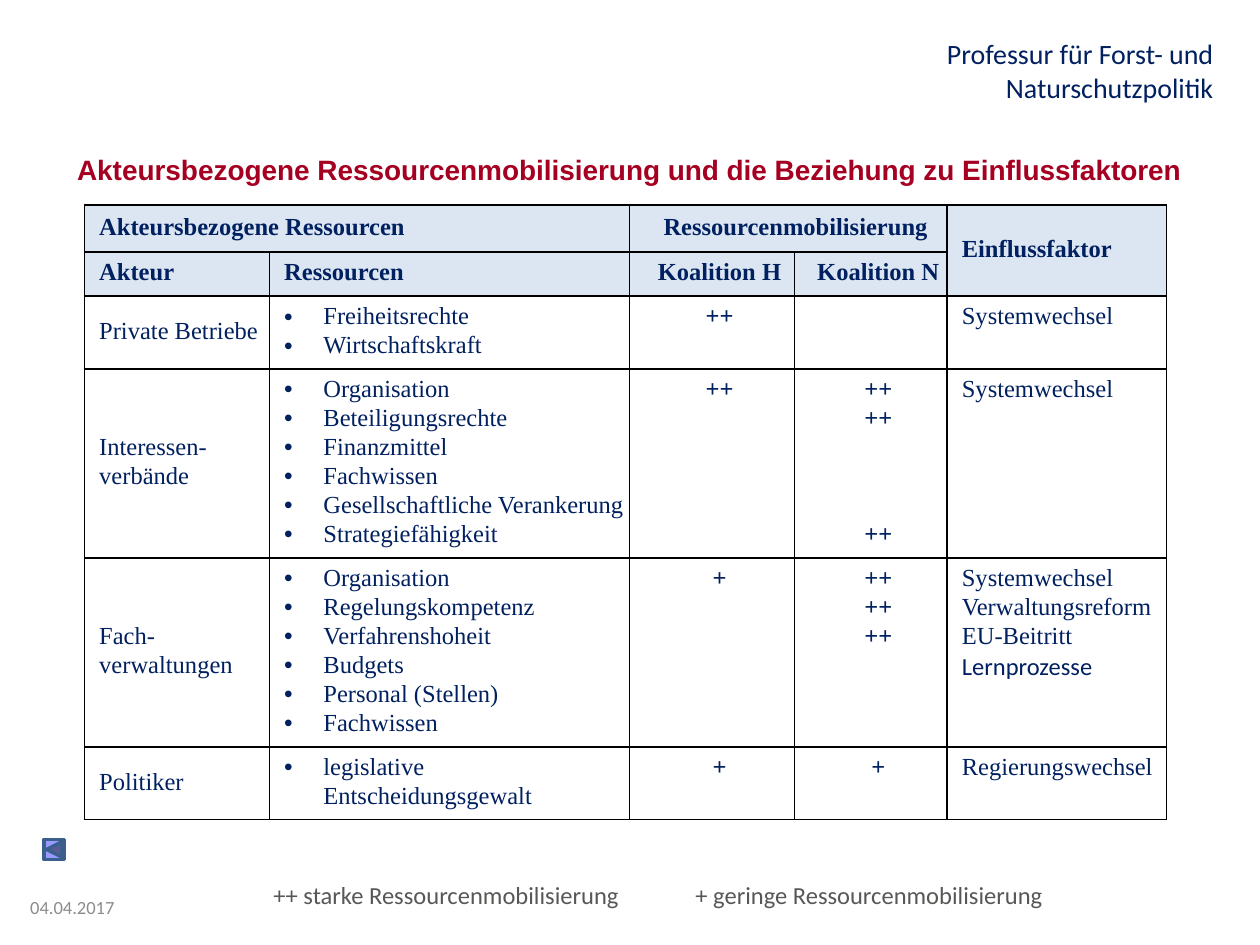
from dataclasses import dataclass

from lxml import etree
from pptx import Presentation
from pptx.dml.color import RGBColor
from pptx.enum.shapes import MSO_SHAPE
from pptx.enum.text import MSO_ANCHOR, PP_ALIGN
from pptx.oxml.ns import qn
from pptx.util import Cm, Pt

LEFT, MID, RIGHT = PP_ALIGN.LEFT, PP_ALIGN.CENTER, PP_ALIGN.RIGHT
TOP, CENTRE = MSO_ANCHOR.TOP, MSO_ANCHOR.MIDDLE
BACK = MSO_SHAPE.ACTION_BUTTON_BACK_OR_PREVIOUS

HEX = {"navy": "002060", "red": "A50021", "grey": "575756", "date": "8C8C8C",
       "head": "DCE6F2", "rule": "000000", "button": "9999FF", "edge": "3A5F8C"}
SERIF, SANS, BOLD_SANS = "Times New Roman", "Calibri", "Arial"
SIZE, LINE = 14, 16.6  # table text and its line pitch in points
COLS = (3.73, 7.26, 3.33, 3.07, 4.43)
ROWS = (0.95, 0.89, 1.47, 3.8, 3.8, 1.47)


@dataclass
class Note:
    text: str
    box: tuple
    size: float
    colour: str
    align: int = LEFT


@dataclass
class Head:
    text: str
    row: int
    col: int
    down: int = 1
    across: int = 1
    align: int = LEFT


@dataclass
class Actor:
    """One table row; an empty string in a list of marks leaves a line free."""
    name: str
    means: list
    marks_h: list
    marks_n: list
    factors: list


NOTES = [
    Note("04.04.2017", (0.61, 18.06, 2.87, 0.53), 10.6, "date"),
    Note("Professur für Forst- und Naturschutzpolitik",
         (16.92, 0.74, 7.54, 1.37), 16, "navy", RIGHT),
    Note("++ starke Ressourcenmobilisierung\t+ geringe Ressourcenmobilisierung",
         (5.51, 17.75, 17.2, 0.84), 14, "grey"),
]
HEADS = [
    Head("Akteursbezogene Ressourcen", 0, 0, across=2),
    Head("Ressourcenmobilisierung", 0, 2, across=2, align=MID),
    Head("Einflussfaktor", 0, 4, down=2),
    Head("Akteur", 1, 0),
    Head("Ressourcen", 1, 1),
    Head("Koalition H", 1, 2, align=MID),
    Head("Koalition N", 1, 3, align=MID),
]
ACTORS = [
    Actor("Private Betriebe", ["Freiheitsrechte", "Wirtschaftskraft"],
          ["++"], [], ["Systemwechsel"]),
    Actor("Interessen-verbände",
          ["Organisation", "Beteiligungsrechte", "Finanzmittel", "Fachwissen",
           "Gesellschaftliche Verankerung", "Strategiefähigkeit"],
          ["++"], ["++", "++", "", "", "", "++"], ["Systemwechsel"]),
    Actor("Fach-verwaltungen",
          ["Organisation", "Regelungskompetenz", "Verfahrenshoheit", "Budgets",
           "Personal (Stellen)", "Fachwissen"],
          ["+"], ["++", "++", "++"],
          ["Systemwechsel", "Verwaltungsreform", "EU-Beitritt", "Lernprozesse"]),
    Actor("Politiker", ["legislative Entscheidungsgewalt"],
          ["+"], ["+"], ["Regierungswechsel"]),
]


def rgb(name: str) -> RGBColor:
    return RGBColor.from_string(HEX[name])


def style(par, face: str, size: float, colour: str, bold: bool = False) -> None:
    for run in par.runs:
        font = run.font
        font.name, font.size, font.bold = face, Pt(size), bold
        font.color.rgb = rgb(colour)


def add_dot(par) -> None:
    """Turn a paragraph into a bullet with a hanging indent."""
    props = par._p.get_or_add_pPr()
    props.set("marL", str(Cm(0.79)))
    props.set("indent", str(Cm(-0.79)))
    etree.SubElement(props, qn("a:buFont"), typeface="Arial")
    etree.SubElement(props, qn("a:buChar"), char="•")


def add_rules(cell) -> None:
    """Draw the four borders of a cell."""
    props = cell._tc.get_or_add_tcPr()
    for i, side in enumerate(("lnL", "lnR", "lnT", "lnB")):
        line = etree.Element(qn(f"a:{side}"), w=str(Pt(1)))
        fill = etree.SubElement(line, qn("a:solidFill"))
        etree.SubElement(fill, qn("a:srgbClr"), val=HEX["rule"])
        props.insert(i, line)


def fill_cell(cell, lines: list, align: int = LEFT, anchor: int = TOP,
              bold: bool = False, dots: bool = False) -> None:
    cell.vertical_anchor = anchor
    frame, gap = cell.text_frame, 0
    for i, text in enumerate(lines):
        if not text:
            gap += 1
            continue
        par = frame.add_paragraph() if i else frame.paragraphs[0]
        par.text = text
        if dots:
            add_dot(par)
        par.alignment, par.line_spacing = align, 1.07
        if gap:
            par.space_before = Pt(gap * LINE)
            gap = 0
        style(par, SANS if text == "Lernprozesse" else SERIF, SIZE, "navy", bold)


def add_grid(slide) -> None:
    frame = slide.shapes.add_table(len(ROWS), len(COLS), Cm(1.7), Cm(4.13),
                                   Cm(sum(COLS)), Cm(sum(ROWS)))
    grid = frame.table
    grid.first_row = grid.horz_banding = False
    for col, width in zip(grid.columns, COLS):
        col.width = Cm(width)
    for i, (row, height) in enumerate(zip(grid.rows, ROWS)):
        row.height = Cm(height)
        for cell in row.cells:
            cell.margin_left, cell.margin_right = Cm(0.3), 0
            cell.margin_top, cell.margin_bottom = Cm(0.1), Cm(0.2)
            if i < 2:
                cell.fill.solid()
                cell.fill.fore_color.rgb = rgb("head")
            else:
                cell.fill.background()
            add_rules(cell)
    for head in HEADS:
        cell = grid.cell(head.row, head.col)
        if head.down * head.across > 1:
            cell.merge(grid.cell(head.row + head.down - 1,
                                 head.col + head.across - 1))
        fill_cell(cell, [head.text], head.align, CENTRE, bold=True)
    for i, actor in enumerate(ACTORS, 2):
        fill_cell(grid.cell(i, 0), [actor.name], anchor=CENTRE)
        fill_cell(grid.cell(i, 1), actor.means, dots=True)
        fill_cell(grid.cell(i, 2), actor.marks_h, MID, bold=True)
        fill_cell(grid.cell(i, 3), actor.marks_n, MID, bold=True)
        fill_cell(grid.cell(i, 4), actor.factors)


def add_note(slide, note: Note) -> None:
    frame = slide.shapes.add_textbox(*map(Cm, note.box)).text_frame
    frame.word_wrap = True
    frame.margin_left = frame.margin_right = 0
    frame.margin_top = frame.margin_bottom = 0
    frame.text = note.text
    par = frame.paragraphs[0]
    par.alignment = note.align
    if "\t" in note.text:
        tabs = etree.SubElement(par._p.get_or_add_pPr(), qn("a:tabLst"))
        etree.SubElement(tabs, qn("a:tab"), pos=str(Cm(8.51)), algn="l")
    style(par, SANS, note.size, note.colour)


def set_title(slide) -> None:
    title = slide.shapes.title
    title.left, title.top, title.width, title.height = map(
        Cm, (1.3, 2.92, 22.94, 0.99))
    frame = title.text_frame
    frame.text = ("Akteursbezogene Ressourcenmobilisierung "
                  "und die Beziehung zu Einflussfaktoren")
    frame.word_wrap, frame.vertical_anchor = True, CENTRE
    par = frame.paragraphs[0]
    par.alignment = LEFT
    style(par, BOLD_SANS, 16, "red", True)


def add_button(slide) -> None:
    button = slide.shapes.add_shape(BACK, Cm(0.89), Cm(16.92), Cm(0.41), Cm(0.41))
    button.shadow.inherit = False
    button.fill.solid()
    button.fill.fore_color.rgb = rgb("button")
    button.line.color.rgb, button.line.width = rgb("edge"), Pt(2)


def main() -> None:
    deck = Presentation()
    deck.slide_width, deck.slide_height = Cm(25.4), Cm(19.05)
    slide = deck.slides.add_slide(deck.slide_layouts[5])
    set_title(slide)
    add_grid(slide)
    for note in NOTES:
        add_note(slide, note)
    add_button(slide)
    deck.save("out.pptx")


if __name__ == "__main__":
    main()
